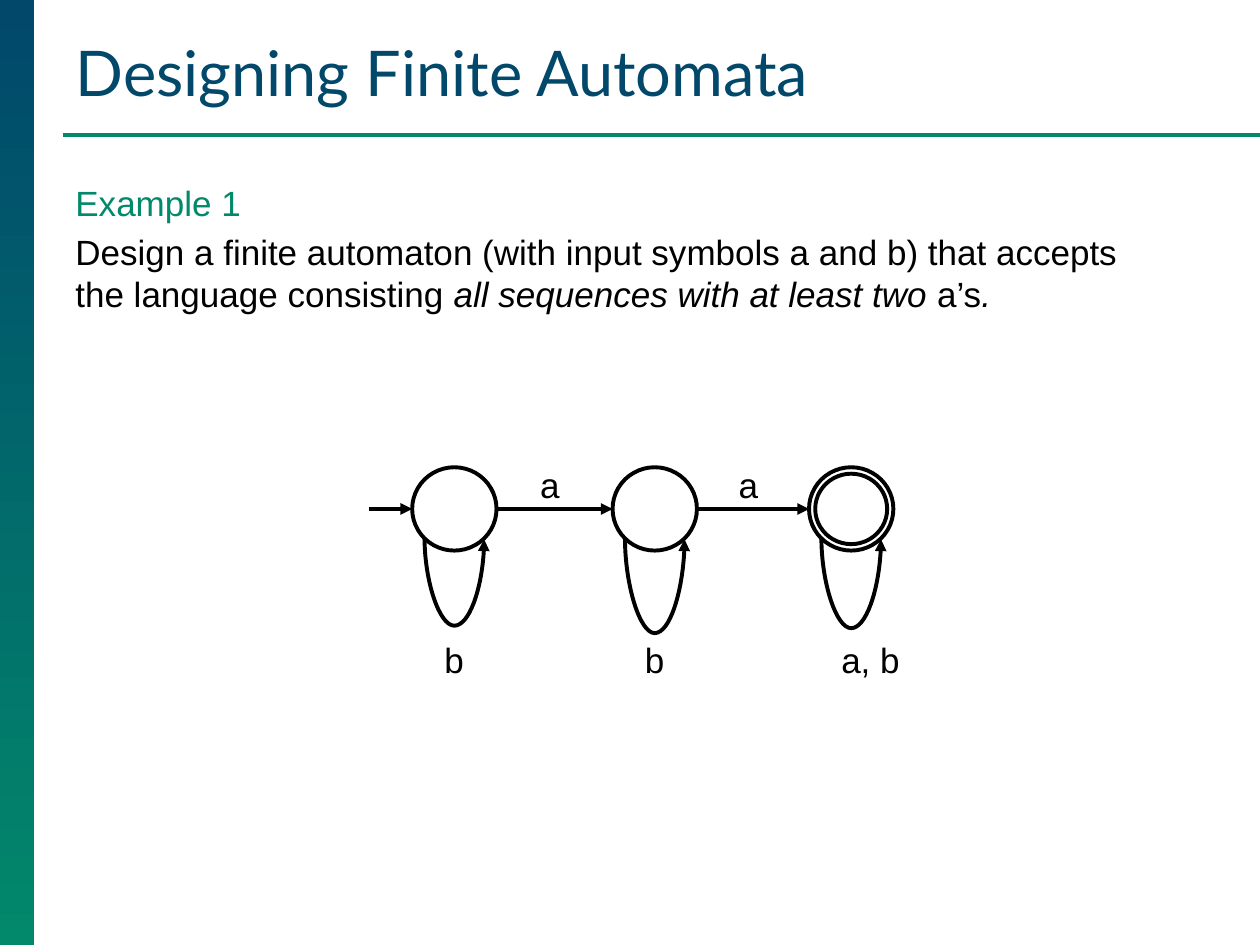
from dataclasses import dataclass
from itertools import pairwise
from math import sqrt

from lxml import etree
from pptx import Presentation
from pptx.dml.color import RGBColor
from pptx.enum.shapes import MSO_CONNECTOR, MSO_SHAPE
from pptx.enum.text import MSO_ANCHOR, MSO_AUTO_SIZE, PP_ALIGN
from pptx.oxml.ns import qn
from pptx.util import Cm, Pt

STRAIGHT, CURVE = MSO_CONNECTOR.STRAIGHT, MSO_CONNECTOR.CURVE
RECTANGLE, OVAL = MSO_SHAPE.RECTANGLE, MSO_SHAPE.OVAL
TOP, BOTTOM = MSO_ANCHOR.TOP, MSO_ANCHOR.BOTTOM
LEFT = PP_ALIGN.LEFT
NO_FIT, GROW = MSO_AUTO_SIZE.NONE, MSO_AUTO_SIZE.SHAPE_TO_FIT_TEXT
TITLE_ONLY = 5

# Connection sites: sides as python-pptx counts them, and sites of an ellipse
SIDE_LEFT, SIDE_BOTTOM, SIDE_RIGHT = 1, 2, 3
OVAL_LEFT, OVAL_LOWER_LEFT, OVAL_LOWER_RIGHT, OVAL_RIGHT = 2, 3, 5, 6


@dataclass(frozen=True)
class Theme:
    navy: RGBColor = RGBColor(0x01, 0x48, 0x6B)
    green: RGBColor = RGBColor(0x02, 0x88, 0x6B)
    ink: RGBColor = RGBColor(0, 0, 0)
    title_font: str = "Lato"
    text_font: str = "Arial"
    title_size: Pt = Pt(36)
    text_size: Pt = Pt(20)
    stroke: Pt = Pt(2.25)


def apply(target, values):
    for attribute, value in values.items():
        setattr(target, attribute, value)


def place(shape, left, top, width, height):
    apply(shape, {"left": Cm(left), "top": Cm(top),
                  "width": Cm(width), "height": Cm(height)})


class SlideBuilder:
    def __init__(self, slide, theme):
        self.slide, self.shapes, self.theme = slide, slide.shapes, theme

    def side_bar(self, width, height):
        bar = self.shapes.add_shape(RECTANGLE, 0, 0, Cm(width), Cm(height))
        bar.shadow.inherit = False
        bar.line.fill.background()
        bar.fill.gradient()
        bar.fill.gradient_angle = 270
        for stop, colour in zip(bar.fill.gradient_stops,
                                (self.theme.navy, self.theme.green)):
            stop.color.rgb = colour

    def add_runs(self, paragraph, runs, size, font, colour):
        """Add (text, italic) runs in one common style."""
        paragraph.alignment = LEFT
        for text, italic in runs:
            run = paragraph.add_run()
            run.text = text
            apply(run.font, {"size": size, "name": font, "italic": italic})
            run.font.color.rgb = colour

    def title(self, text, *box):
        heading = self.shapes.title
        place(heading, *box)
        apply(heading.text_frame, {"vertical_anchor": BOTTOM, "auto_size": NO_FIT,
                                   "word_wrap": True})
        self.add_runs(heading.text_frame.paragraphs[0], [(text, False)],
                      self.theme.title_size, self.theme.title_font, self.theme.navy)

    def text(self, paragraphs, *box, wrap=True):
        """Add a text box of (colour, runs) paragraphs."""
        frame = self.shapes.add_textbox(*map(Cm, box)).text_frame
        apply(frame, {"word_wrap": wrap, "vertical_anchor": TOP,
                      "auto_size": NO_FIT if wrap else GROW})
        for index, (colour, runs) in enumerate(paragraphs):
            paragraph = frame.add_paragraph() if index else frame.paragraphs[0]
            paragraph.space_before = Pt(4 if index else 0)
            self.add_runs(paragraph, runs, self.theme.text_size,
                          self.theme.text_font, colour)

    def label(self, text, left, top, width):
        self.text([(self.theme.ink, [(text, False)])],
                  left, top, width, 1.12, wrap=False)

    def ring(self, x, y, width, height):
        """Draw an unfilled ellipse centred on x, y."""
        ring = self.shapes.add_shape(OVAL, Cm(x - width / 2), Cm(y - height / 2),
                                     Cm(width), Cm(height))
        ring.shadow.inherit = False
        ring.fill.background()
        ring.line.color.rgb = self.theme.ink
        ring.line.width = self.theme.stroke
        return ring

    def line(self, x1, y1, x2, y2, colour, kind=STRAIGHT, arrow=False):
        line = self.shapes.add_connector(kind, Cm(x1), Cm(y1), Cm(x2), Cm(y2))
        line.line.color.rgb = colour
        line.line.width = self.theme.stroke
        properties = line._element.spPr
        if arrow:
            etree.SubElement(properties.find(qn("a:ln")), qn("a:tailEnd"),
                             type="triangle")
        etree.SubElement(properties, qn("a:effectLst"))
        return line

    def join(self, line, source=None, target=None):
        """Join ends to (ellipse, side, site); the site replaces the side number."""
        for end, connect, tag in ((source, line.begin_connect, "a:stCxn"),
                                  (target, line.end_connect, "a:endCxn")):
            if end:
                ellipse, side, site = end
                connect(ellipse, side)
                link = next(line._element.iter(qn(tag)))
                link.set("idx", str(site))

    def arrow(self, x1, x2, y, source=None, target=None):
        line = self.line(x1, y, x2, y, self.theme.ink, arrow=True)
        self.join(line, source and (source, SIDE_RIGHT, OVAL_RIGHT),
                  target and (target, SIDE_LEFT, OVAL_LEFT))

    def loop(self, state, x, y, span, depth):
        """Hang an arrow of the given depth between the lower corners of a state."""
        rise = 0.04
        loop = self.line(x, y, x + rise, y + span, self.theme.ink, CURVE, True)
        self.join(loop, (state, SIDE_BOTTOM, OVAL_LOWER_LEFT),
                  (state, SIDE_BOTTOM, OVAL_LOWER_RIGHT))
        place(loop, x - rise / 2, y - span / 2, rise, span)
        properties = loop._element.spPr
        for name, value in {"rot": "16200000", "flipH": "1", "flipV": "0"}.items():
            properties.find(qn("a:xfrm")).set(name, value)
        etree.SubElement(next(properties.iter(qn("a:avLst"))), qn("a:gd"),
                         name="adj1", fmla=f"val {round(depth / rise * 100000)}")


def main():
    theme = Theme()
    deck = Presentation()
    deck.slide_width, deck.slide_height = Cm(25.4), Cm(19.05)
    page = SlideBuilder(deck.slides.add_slide(deck.slide_layouts[TITLE_ONLY]), theme)

    page.side_bar(0.69, 19.05)
    page.line(1.27, 2.72, 25.4, 2.72, theme.green)
    page.title("Designing Finite Automata", 1.27, 0.53, 23.57, 1.8)
    page.text([
        (theme.green, [("Example 1", False)]),
        (theme.ink, [
            ("Design a finite automaton (with input symbols a and b) that accepts "
             "the language consisting ", False),
            ("all sequences with at least two ", True),
            ("a’s", False),
            (".", True)]),
    ], 1.27, 3.53, 22.66, 14)

    axis, width, height = 10.26, 1.7, 1.68
    radius = width / 2
    # centre, loop label, label width, loop depth
    automaton = [(9.16, "b", 0.91, 1.78),
                 (13.2, "b", 0.91, 1.93),
                 (17.16, "a, b", 1.7, 1.83)]
    states = [(x, page.ring(x, axis, width, height)) for x, *_ in automaton]
    first_x, first_state = states[0]
    final_x, _ = states[-1]
    page.ring(final_x, axis, 1.45, 1.42)

    page.arrow(7.44, first_x - radius, axis, target=first_state)
    for (x1, source), (x2, target) in pairwise(states):
        page.arrow(x1 + radius, x2 - radius, axis, source, target)
        page.label("a", (x1 + x2) / 2 - 0.54, 9.22, 0.91)

    for (x, state), (_, symbols, label_width, depth) in zip(states, automaton):
        page.loop(state, x, axis + height / sqrt(8), width / sqrt(2), depth)
        page.label(symbols, x - 0.45, 12.75, label_width)

    deck.save("out.pptx")


if __name__ == "__main__":
    main()
